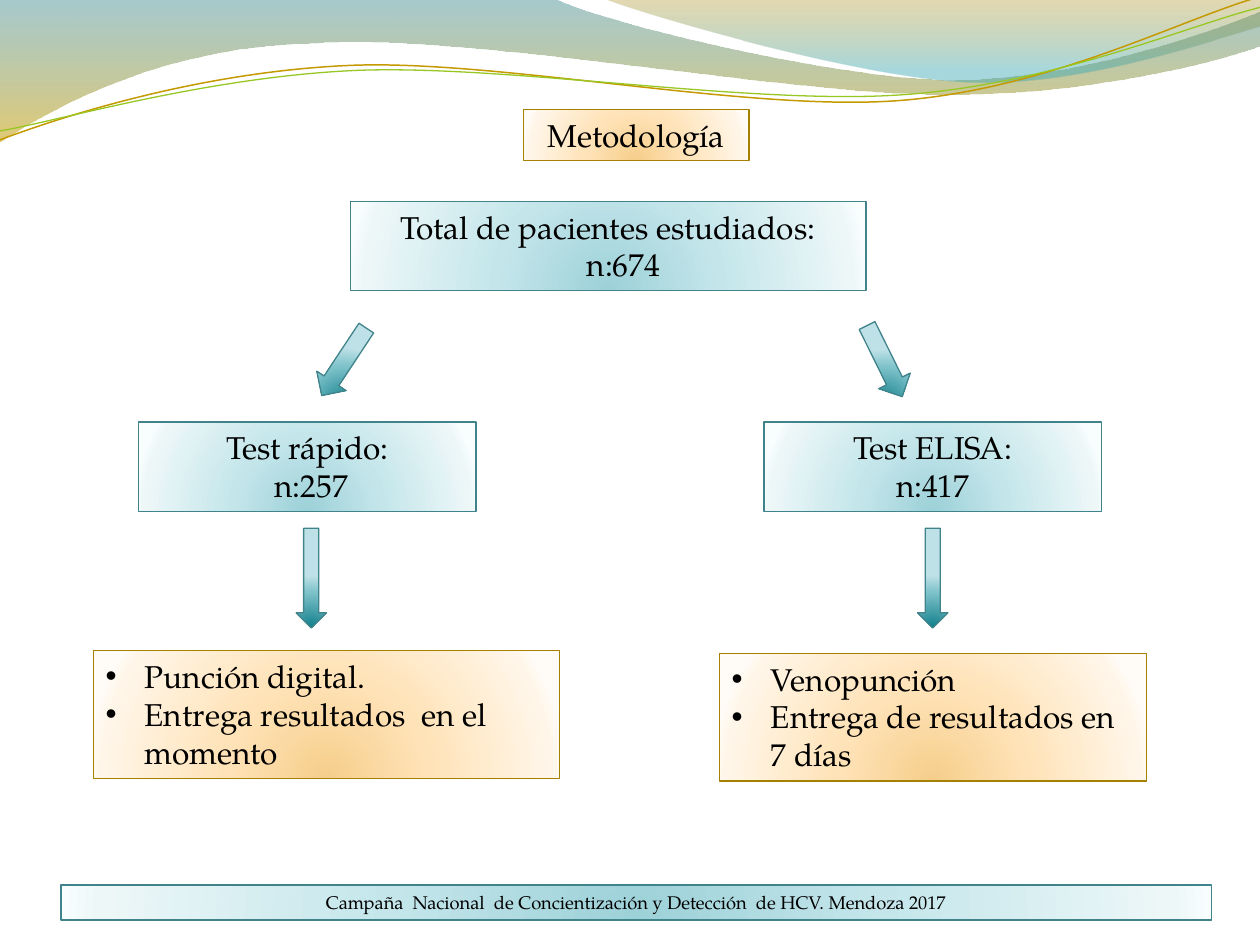
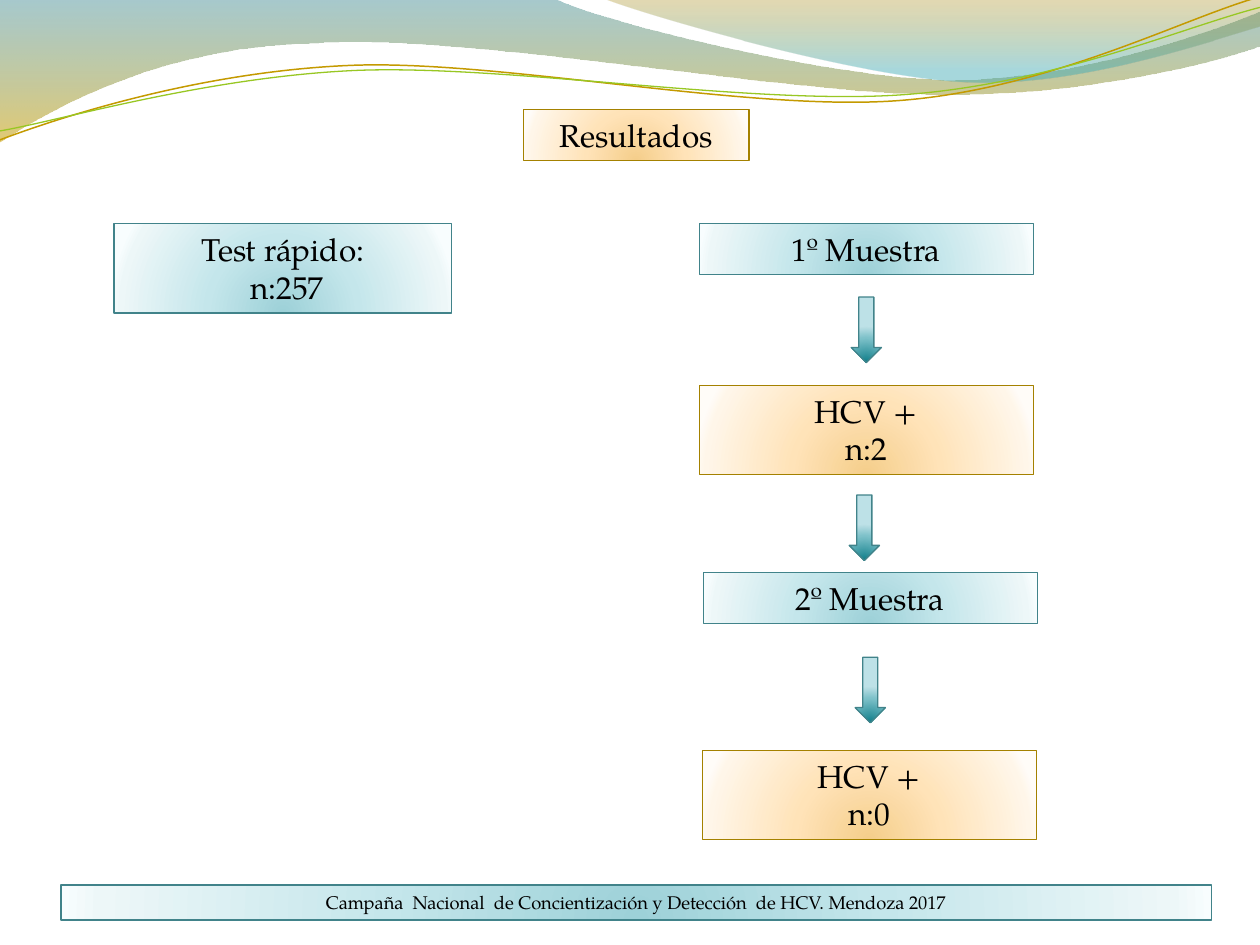
from pptx import Presentation
from pptx.dml.color import RGBColor
from pptx.enum.shapes import MSO_SHAPE
from pptx.enum.text import MSO_ANCHOR, MSO_AUTO_SIZE, PP_ALIGN
from pptx.oxml import parse_xml
from pptx.oxml.ns import nsdecls, qn
from pptx.util import Cm, Pt

RECTANGLE, DOWN_ARROW = MSO_SHAPE.RECTANGLE, MSO_SHAPE.DOWN_ARROW
CENTER, LEFT = PP_ALIGN.CENTER, PP_ALIGN.LEFT
TOP, GROW = MSO_ANCHOR.TOP, MSO_AUTO_SIZE.SHAPE_TO_FIT_TEXT

FONT = "TeX Gyre Pagella"
BLACK = RGBColor(0x00, 0x00, 0x00)
TEAL_LINE = RGBColor(0x41, 0x83, 0x8A)
OCHRE_LINE = RGBColor(0xA4, 0x81, 0x00)
GOLD = RGBColor(0xC4, 0x9A, 0x00)
GREEN = RGBColor(0x98, 0xC7, 0x23)


def stops(*pairs):
    """Gradient stops from (position %, hex colour[, opacity %])."""
    return [(pair[0], RGBColor.from_string(pair[1]), *pair[2:]) for pair in pairs]


# Styles: gradient stops and outline
TEAL = (stops((0, "9DD1D8"), (43, "C4E6EB"), (93, "EDF7F8"), (100, "F8FDFE")), TEAL_LINE)
ORANGE = (stops((0, "F5CE8B"), (43, "FFE3B8"), (93, "FFF6E9"), (100, "FFFCF8")), OCHRE_LINE)
ARROW = (stops((0, "107F8B"), (68, "7EC2CA"), (100, "BDE1E7")), TEAL_LINE)

# Header waves in cm: a start, then line ends (one point) or curves (three points)
WAVE_BANDS = [
    ((0, 0), [
        [(11.18, -0.03)],
        [(12.09, 0.43), (16.87, 1.6), (19.25, 1.6)],
        [(21.67, 1.6), (24.33, 0.66), (25.4, 0.23)],
        [(25.43, 0.91)],
        [(24.97, 1.12), (22.1, 1.93), (18.95, 1.9)],
        [(15.8, 1.9), (9.7, 0.71), (6.53, 0.86)],
        [(3.28, 0.91), (1.17, 2.11), (-0.03, 2.87)],
    ], stops((0, "3B8890", 45), (100, "C99E00", 55))),
    ((12.17, -0.03), [
        [(12.93, 0.28), (17.32, 1.57), (19.53, 1.65)],
        [(21.74, 1.75), (24.41, 0.81), (25.4, 0.53)],
        [(25.4, 0)],
    ], stops((0, "A48100", 30), (80, "3EA9B4", 45))),
]
WAVE_LINES = [
    ((0, 2.82), [
        [(1.22, 2.36), (4.01, 1.45), (7.04, 1.32)],
        [(10.03, 1.19), (15.06, 2.26), (18.11, 2.03)],
        [(21.16, 1.8), (23.83, 0.38), (25.35, -0.05)],
    ], GOLD, 0.85),
    ((0, 2.64), [
        [(1.19, 2.44), (4.17, 1.55), (7.19, 1.42)],
        [(10.24, 1.3), (15.16, 2.13), (18.21, 1.91)],
        [(21.23, 1.7), (23.9, 0.53), (25.4, 0.15)],
    ], GREEN, 0.75),
]

FOOTER = "Campaña  Nacional  de Concientización y Detección  de HCV. Mendoza 2017"
RAPID_TEST = ["Test rápido:", " n:257"]
TEST_WIDTH, SAMPLE_WIDTH, ARROW_WIDTH = 6.81, 6.73, 0.61

# Boxes: left, top, width, style, lines (or a line with its indent).
# Lists: left, top, width, items.  Arrows: left, top, width, height, rotation.
SLIDES = [
    {
        "title": "Metodología",
        "boxes": [
            (7.06, 4.06, 10.4, TEAL, ["Total de pacientes estudiados:", ("n:674", 0.62)]),
            (2.79, 8.51, TEST_WIDTH, TEAL, RAPID_TEST),
            (15.4, 8.51, TEST_WIDTH, TEAL, ["Test ELISA:", "n:417"]),
        ],
        "lists": [
            (1.88, 13.12, 9.4, ["Punción digital.", "Entrega resultados  en el momento"]),
            (14.5, 13.17, 8.61, ["Venopunción", "Entrega de resultados en 7 días"]),
        ],
        "arrows": [
            (5.97, 10.65, ARROW_WIDTH, 2.01, 0),
            (18.5, 10.65, ARROW_WIDTH, 2.01, 0),
            (6.58, 6.48, 0.71, 1.63, 33.5),
            (17.48, 6.48, 0.71, 1.6, 333.7),
        ],
    },
    {
        "title": "Resultados",
        "boxes": [
            (2.3, 4.51, TEST_WIDTH, TEAL, RAPID_TEST),
            (14.1, 4.51, SAMPLE_WIDTH, TEAL, ["1º Muestra"]),
            (14.1, 7.77, SAMPLE_WIDTH, ORANGE, ["HCV +", "n:2"]),
            (14.18, 11.54, SAMPLE_WIDTH, TEAL, ["2º Muestra"]),
            (14.16, 15.13, SAMPLE_WIDTH, ORANGE, ["HCV +", "n:0"]),
        ],
        "lists": [],
        "arrows": [(left, top, ARROW_WIDTH, 1.32, 0)
                   for left, top in [(17.16, 5.99), (17.12, 9.98), (17.24, 13.25)]],
    },
]


def fill_gradient(shape, gradient, direction):
    """Give the shape a gradient with the given direction element."""
    items = ""
    for position, colour, *opacity in gradient:
        alpha = f'<a:alpha val="{opacity[0] * 1000}"/>' if opacity else ""
        items += (f'<a:gs pos="{position * 1000}"><a:srgbClr val="{colour}">'
                  f'{alpha}</a:srgbClr></a:gs>')
    shape.fill.background()
    properties = shape.fill._xPr
    properties.replace(properties.find(qn("a:noFill")), parse_xml(
        f'<a:gradFill {nsdecls("a")} rotWithShape="1"><a:gsLst>{items}</a:gsLst>'
        f'{direction}</a:gradFill>'))


def add_styled_shape(page, kind, left, top, width, height, style):
    """Preset shape with a round gradient centred below it."""
    shape = page.shapes.add_shape(kind, Cm(left), Cm(top), Cm(width), Cm(height))
    gradient, outline = style
    fill_gradient(shape, gradient, '<a:path path="circle">'
                  '<a:fillToRect l="50000" t="130000" r="50000" b="-30000"/></a:path>')
    shape.line.color.rgb = outline
    shape.line.width = Pt(0.75)
    shape.shadow.inherit = False
    return shape


def add_box(page, left, top, width, style, lines, rows=None, height=None, size=18, bullets=False):
    """Text box whose height follows from its number of text rows."""
    height = height or 0.25 + 0.775 * (rows or len(lines))
    box = add_styled_shape(page, RECTANGLE, left, top, width, height, style)
    frame = box.text_frame
    frame.word_wrap = True
    frame.auto_size = GROW
    frame.vertical_anchor = TOP
    for index, line in enumerate(lines):
        text, indent = (line, 0) if isinstance(line, str) else line
        para = frame.paragraphs[0] if index == 0 else frame.add_paragraph()
        para.alignment = LEFT if bullets else CENTER
        properties = para._p.get_or_add_pPr()
        if bullets:
            properties.set("marL", str(Cm(0.79)))
            properties.set("indent", str(-Cm(0.79)))
            properties.append(parse_xml(f'<a:buFont {nsdecls("a")} typeface="Arial"/>'))
            properties.append(parse_xml(f'<a:buChar {nsdecls("a")} char="•"/>'))
        elif indent:
            properties.set("marL", str(Cm(indent)))
        span = para.add_run()
        span.text = text
        span.font.name = FONT
        span.font.size = Pt(size)
        span.font.color.rgb = BLACK


def add_outline(page, start, segments, close):
    """Freeform of lines and true cubic curves."""
    points = [(Cm(x), Cm(y)) for segment in segments for x, y in segment]
    builder = page.shapes.build_freeform(Cm(start[0]), Cm(start[1]))
    builder.add_line_segments(points, close=close)
    shape = builder.convert_to_shape()
    shape.shadow.inherit = False
    # Merge each three line steps of a curve into one curve step
    steps = iter(list(shape._element.iter(qn("a:lnTo"))))
    for segment in segments:
        members = [next(steps) for _ in segment]
        if len(members) == 3:
            curve = parse_xml(f'<a:cubicBezTo {nsdecls("a")}/>')
            members[0].addprevious(curve)
            for member in members:
                curve.append(member[0])
                member.getparent().remove(member)
    return shape


def add_frame(page, title):
    """Parts that every slide shares: waves, title and footer."""
    for start, segments, gradient in WAVE_BANDS:
        band = add_outline(page, start, segments, close=True)
        fill_gradient(band, gradient, '<a:lin ang="5400000" scaled="0"/>')
        band.line.fill.background()
    for start, segments, colour, width in WAVE_LINES:
        wave = add_outline(page, start, segments, close=False)
        wave.fill.background()
        wave.line.color.rgb = colour
        wave.line.width = Pt(width)
    add_box(page, 10.55, 2.21, 4.55, ORANGE, [title])
    add_box(page, 1.23, 17.84, 23.19, TEAL, [FOOTER], height=0.71, size=10.5)


def main():
    deck = Presentation()
    deck.slide_width, deck.slide_height = Cm(25.4), Cm(19.05)
    for content in SLIDES:
        page = deck.slides.add_slide(deck.slide_layouts[6])
        add_frame(page, content["title"])
        for box in content["boxes"]:
            add_box(page, *box)
        for left, top, width, items in content["lists"]:
            add_box(page, left, top, width, ORANGE, items, rows=3, bullets=True)
        for *place, rotation in content["arrows"]:
            arrow = add_styled_shape(page, DOWN_ARROW, *place, ARROW)
            arrow.rotation = rotation
    deck.save("out.pptx")


if __name__ == "__main__":
    main()
